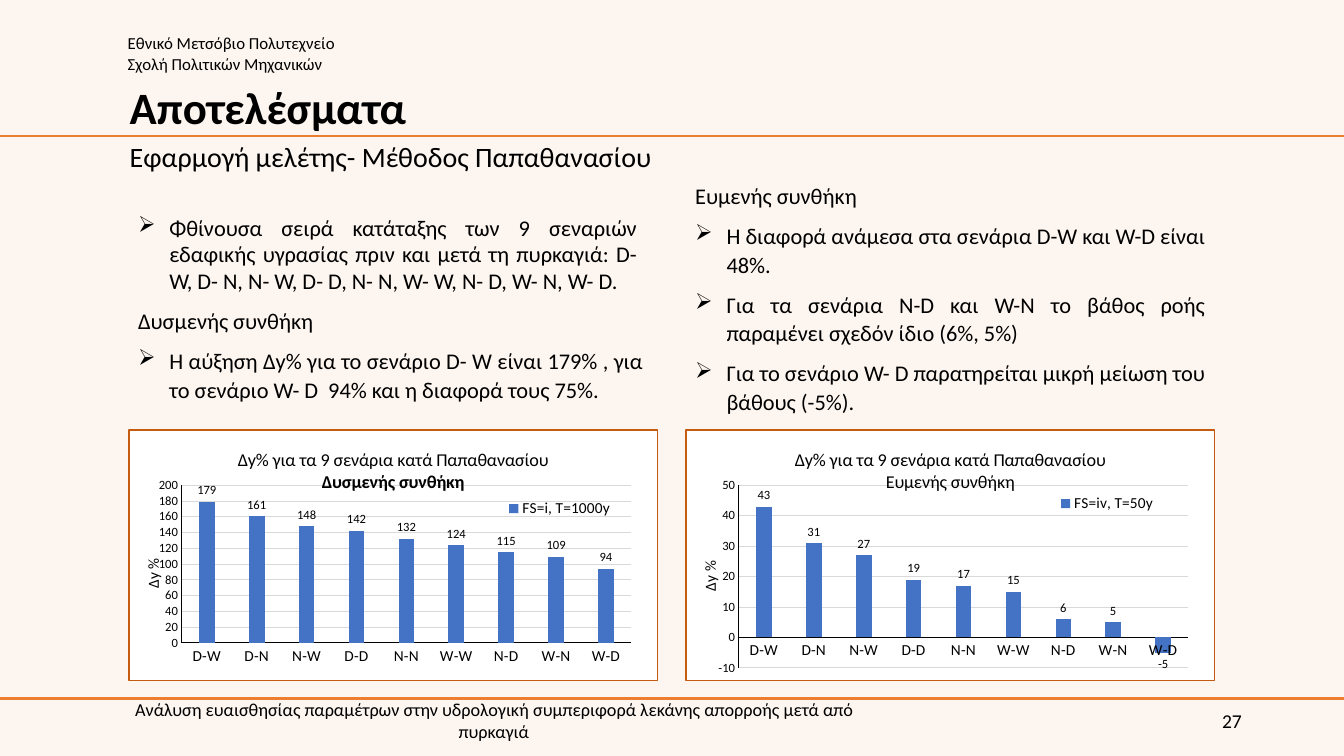
from lxml import etree
from pptx import Presentation
from pptx import util as u
from pptx.chart import data as chart_data
from pptx.dml.color import RGBColor
from pptx.enum import chart as ch, shapes, text
from pptx.oxml import parse_xml
from pptx.oxml.ns import nsdecls, qn

BLACK = RGBColor(0x00, 0x00, 0x00)
ORANGE = RGBColor(0xED, 0x7D, 0x31)
BLUE = RGBColor(0x44, 0x72, 0xC4)
GRID = RGBColor(0xD9, 0xD9, 0xD9)
BACKGROUND = RGBColor(0xFD, 0xF5, 0xEF)
BORDER = RGBColor(0xC5, 0x5A, 0x11)
WHITE = RGBColor(0xFF, 0xFF, 0xFF)


def style_font(font, size, bold=False):
    for name, value in {"name": "Calibri", "size": u.Pt(size), "bold": bold}.items():
        setattr(font, name, value)
    font.color.rgb = BLACK


def set_layout(element, index, values, target=""):
    for old in element.findall(qn("c:layout")):
        element.remove(old)
    modes = '<c:xMode val="edge"/><c:yMode val="edge"/>'
    sizes = "".join(f'<c:{name} val="{value}"/>' for name, value in zip("xywh", values))
    element.insert(index, parse_xml(
        f'<c:layout {nsdecls("c")}><c:manualLayout>{target}{modes}{sizes}'
        "</c:manualLayout></c:layout>"))


presentation = Presentation()
presentation.slide_width = u.Cm(33.87)
presentation.slide_height = u.Cm(19.05)
slide = presentation.slides.add_slide(presentation.slide_layouts[6])
slide.background.fill.solid()
slide.background.fill.fore_color.rgb = BACKGROUND

for y in (17.6, 3.43):
    rule = slide.shapes.add_connector(
        shapes.MSO_CONNECTOR.STRAIGHT, 0, u.Cm(y), presentation.slide_width, u.Cm(y))
    rule.line.color.rgb = ORANGE
    rule.line.width = u.Pt(1.5)
    etree.SubElement(rule.element.spPr, qn("a:effectLst"))

LEFT, CENTER = text.PP_ALIGN.LEFT, text.PP_ALIGN.CENTER
RIGHT, JUSTIFY = text.PP_ALIGN.RIGHT, text.PP_ALIGN.JUSTIFY
GROW, FIXED = text.MSO_AUTO_SIZE.SHAPE_TO_FIT_TEXT, text.MSO_AUTO_SIZE.NONE
TOP, MIDDLE = text.MSO_ANCHOR.TOP, text.MSO_ANCHOR.MIDDLE
BODY = {"alignment": JUSTIFY, "line_spacing": 1.07, "space_after": u.Pt(8)}
BULLET = "➢"

text_boxes = [
    ((2.97, 0.71, 10.97, 1.27), 12, False, TOP, GROW, {"alignment": LEFT},
     ["Εθνικό Μετσόβιο Πολυτεχνείο", "Σχολή Πολιτικών Μηχανικών"]),
    ((3.02, 1.55, 14.73, 2.44), 32, True, MIDDLE, FIXED,
     {"alignment": LEFT, "line_spacing": 0.9}, ["Αποτελέσματα"]),
    ((3.02, 3.4, 14.25, 1.12), 20, False, TOP, GROW, {"alignment": LEFT},
     ["Εφαρμογή μελέτης- Μέθοδος Παπαθανασίου"]),
    ((3.23, 5.26, 13.08, 2.31), 16, False, TOP, GROW, {"alignment": JUSTIFY},
     [BULLET + "Φθίνουσα σειρά κατάταξης των 9 σεναριών εδαφικής υγρασίας πριν και μετά "
      "τη πυρκαγιά: D- W, D- N, N- W, D- D, N- N, W- W, N- D, W- N, W- D."]),
    ((3.23, 7.57, 13.23, 2.69), 16, False, TOP, GROW, BODY,
     ["Δυσμενής συνθήκη",
      BULLET + "Η αύξηση Δy% για το σενάριο D- W είναι 179% , για το σενάριο W- D  94% "
      "και η διαφορά τους 75%."]),
    ((17.27, 4.42, 13.36, 6.2), 16, False, TOP, GROW, BODY,
     ["Ευμενής συνθήκη",
      BULLET + "Η διαφορά ανάμεσα στα σενάρια D-W και W-D είναι 48%.",
      BULLET + "Για τα σενάρια Ν-D και W-N το βάθος ροής παραμένει σχεδόν ίδιο (6%, 5%)",
      BULLET + "Για το σενάριο W- D παρατηρείται μικρή μείωση του βάθους (-5%)."]),
    ((2.26, 17.65, 20.37, 1.02), 13, False, MIDDLE, FIXED, {"alignment": CENTER},
     ["Ανάλυση ευαισθησίας παραμέτρων στην υδρολογική συμπεριφορά λεκάνης απορροής "
      "μετά από πυρκαγιά"]),
    ((23.93, 17.65, 7.62, 1.02), 14, False, MIDDLE, FIXED, {"alignment": RIGHT}, ["27"]),
]
for box, size, bold, anchor, auto_size, paragraph_format, lines in text_boxes:
    frame = slide.shapes.add_textbox(*map(u.Cm, box)).text_frame
    frame.word_wrap = True
    frame.vertical_anchor = anchor
    frame.auto_size = auto_size
    for number, line in enumerate(lines):
        paragraph = frame.add_paragraph() if number else frame.paragraphs[0]
        for name, value in paragraph_format.items():
            setattr(paragraph, name, value)
        if line.startswith(BULLET):
            properties = paragraph._p.get_or_add_pPr()
            properties.set("marL", str(u.Cm(0.79)))
            properties.set("indent", str(-u.Cm(0.79)))
            etree.SubElement(properties, qn("a:buChar"), char=BULLET)
        run = paragraph.add_run()
        run.text = line.removeprefix(BULLET)
        style_font(run.font, size, bold)

SCENARIOS = ["D-W", "D-N", "N-W", "D-D", "N-N", "W-W", "N-D", "W-N", "W-D"]
charts = [
    {"left": 3.23, "condition": "Δυσμενής συνθήκη", "bold": True,
     "series": "FS=i, T=1000y", "values": [179, 161, 148, 142, 132, 124, 115, 109, 94],
     "scale": {"minimum_scale": 0, "maximum_scale": 200, "major_unit": 20},
     "plot": (0.1, 0.22, 0.85, 0.63), "legend": (0.71, 0.26), "axis_title": (0.02, 0.5)},
    {"left": 17.27, "condition": "Ευμενής συνθήκη", "bold": False,
     "series": "FS=iv, T=50y", "values": [43, 31, 27, 19, 17, 15, 6, 5, -5],
     "scale": {"minimum_scale": -10, "maximum_scale": 50, "major_unit": 10},
     "plot": (0.1, 0.22, 0.85, 0.73), "legend": (0.7, 0.24), "axis_title": (0.02, 0.51)},
]
for item in charts:
    data = chart_data.CategoryChartData(number_format="0")
    data.categories = SCENARIOS
    data.add_series(item["series"], item["values"])
    chart = slide.shapes.add_chart(
        ch.XL_CHART_TYPE.COLUMN_CLUSTERED, u.Cm(item["left"]), u.Cm(10.82),
        u.Cm(13.36), u.Cm(6.35), data).chart
    style_font(chart.font, 10)

    title = chart.chart_title
    title.include_in_layout = True
    first = title.text_frame.paragraphs[0]
    second = title.text_frame.add_paragraph()
    for paragraph, words, bold in (
            (first, "Δy% για τα 9 σενάρια κατά Παπαθανασίου", False),
            (second, item["condition"], item["bold"])):
        run = paragraph.add_run()
        run.text = words
        style_font(run.font, 13, bold)

    for axis, size in ((chart.category_axis, 11), (chart.value_axis, 9)):
        axis.major_tick_mark = axis.minor_tick_mark = ch.XL_TICK_MARK.NONE
        axis.format.line.color.rgb = BLACK
        axis.format.line.width = u.Pt(0.75)
        style_font(axis.tick_labels.font, size)
    value_axis = chart.value_axis
    for name, value in item["scale"].items():
        setattr(value_axis, name, value)
    value_axis.tick_labels.number_format = "0"
    value_axis.tick_labels.number_format_is_linked = False
    value_axis.major_gridlines.format.line.color.rgb = GRID
    value_axis.major_gridlines.format.line.width = u.Pt(0.75)
    axis_run = value_axis.axis_title.text_frame.paragraphs[0].add_run()
    axis_run.text = "Δy %"
    style_font(axis_run.font, 11)
    body = value_axis.axis_title.text_frame._txBody.find(qn("a:bodyPr"))
    body.set("rot", "-5400000")
    body.set("vert", "horz")

    chart.has_legend = True
    chart.legend.position = ch.XL_LEGEND_POSITION.RIGHT
    chart.legend.include_in_layout = True
    style_font(chart.legend.font, 11)

    plot = chart.plots[0]
    plot.gap_width = 219
    plot.overlap = -27
    plot.vary_by_categories = False
    series = plot.series[0]
    series.invert_if_negative = False
    series.format.fill.solid()
    series.format.fill.fore_color.rgb = BLUE
    labels = series.data_labels
    for name, value in {"show_value": True, "number_format": "0",
                        "number_format_is_linked": False,
                        "position": ch.XL_LABEL_POSITION.OUTSIDE_END}.items():
        setattr(labels, name, value)
    style_font(labels.font, 9)

    root = chart.element.find(qn("c:chart"))
    plot_area = root.find(qn("c:plotArea"))
    set_layout(root.find(qn("c:title")), 1, (0.2, 0.06))
    set_layout(root.find(qn("c:legend")), 1, item["legend"])
    set_layout(plot_area.find(qn("c:valAx")).find(qn("c:title")), 1, item["axis_title"])
    set_layout(plot_area, 0, item["plot"], '<c:layoutTarget val="inner"/>')
    root.addnext(parse_xml(
        f'<c:spPr {nsdecls("c", "a")}><a:solidFill><a:srgbClr val="{WHITE}"/></a:solidFill>'
        f'<a:ln w="{u.Pt(1.25)}"><a:solidFill><a:srgbClr val="{BORDER}"/></a:solidFill></a:ln>'
        "</c:spPr>"))

presentation.save("out.pptx")
